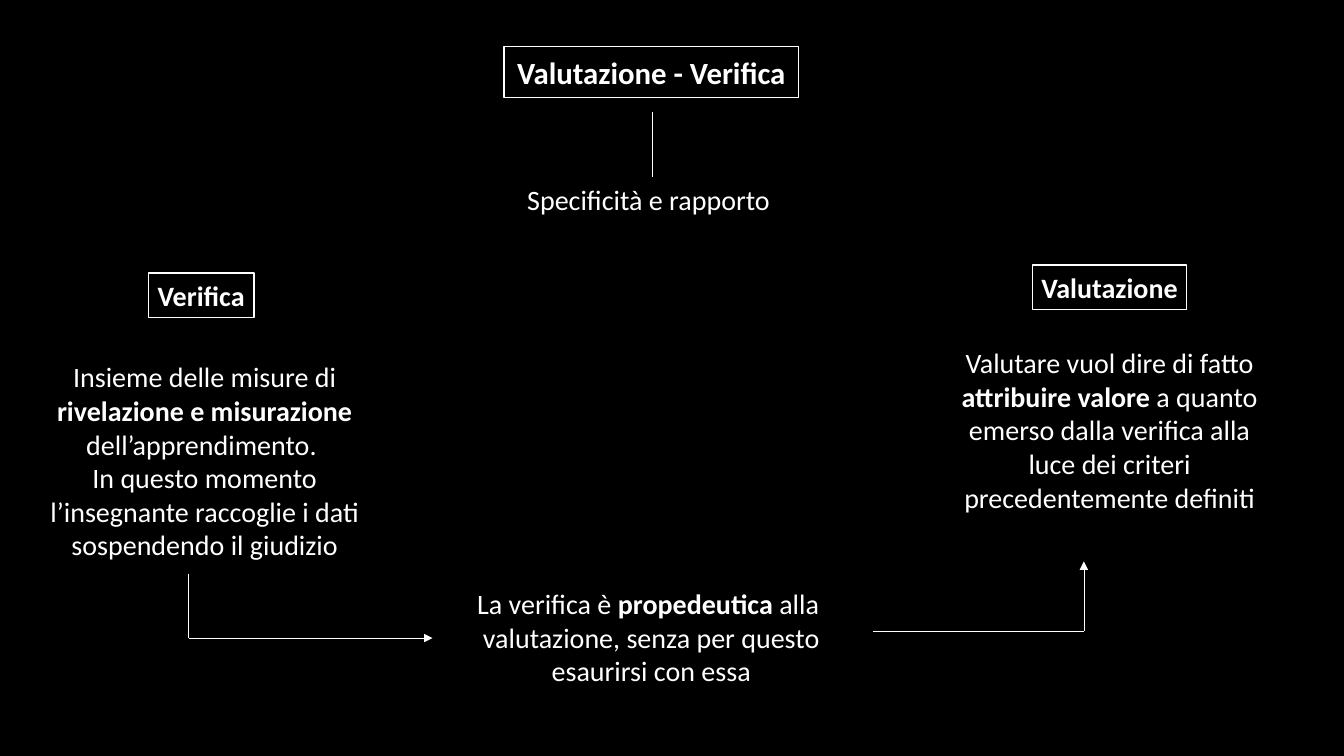
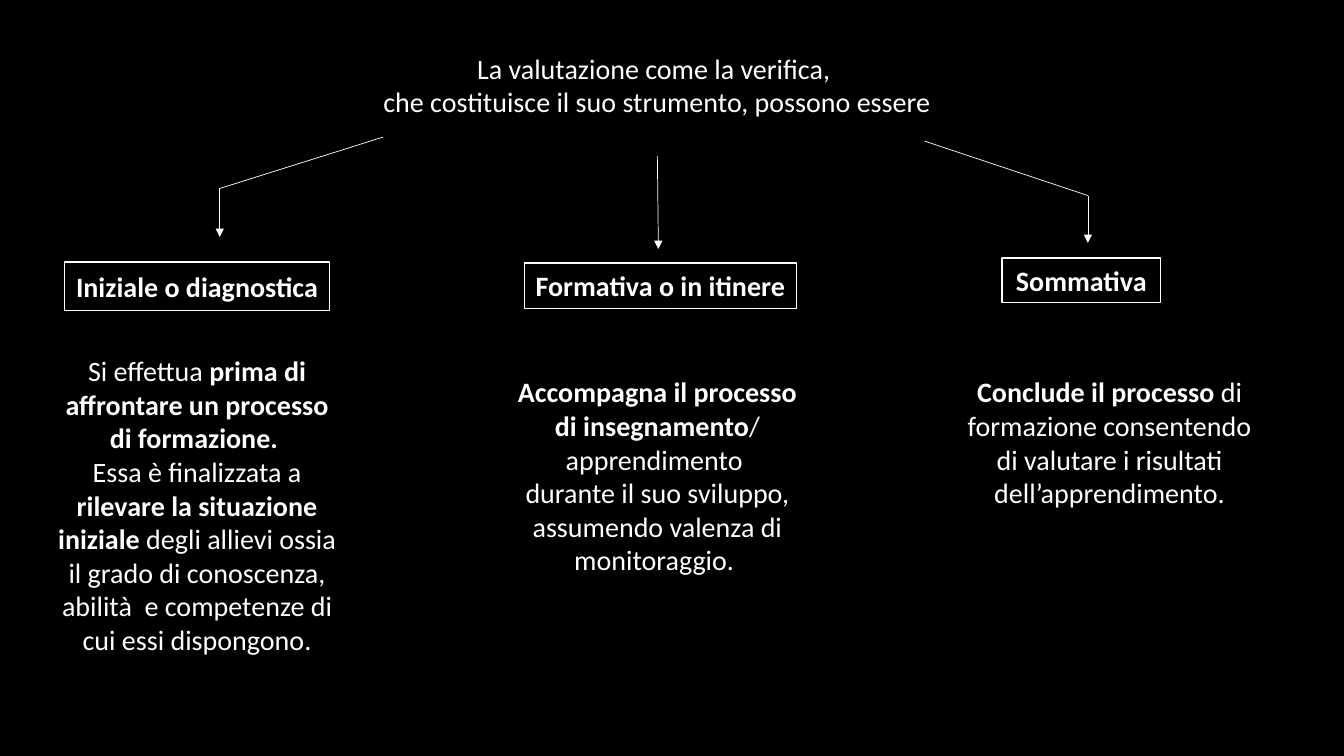
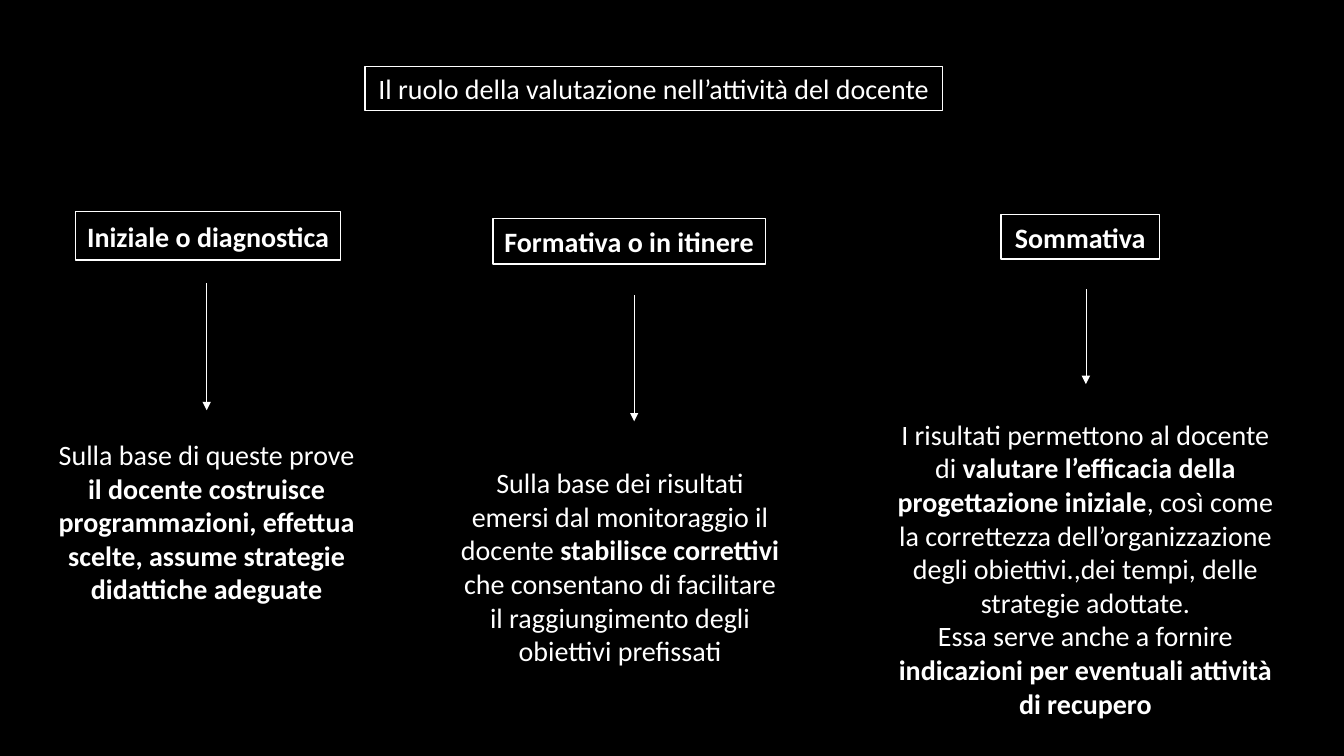
import itertools
from dataclasses import dataclass

import pptx
import pptx.dml.color
import pptx.enum.shapes
import pptx.enum.text
import pptx.oxml
import pptx.oxml.ns
import pptx.util
from pptx.util import Inches


@dataclass(frozen=True)
class Theme:
    """Hold the colours, font and sizes shared by all slides."""

    ground: pptx.dml.color.RGBColor = pptx.dml.color.RGBColor(0, 0, 0)
    ink: pptx.dml.color.RGBColor = pptx.dml.color.RGBColor(255, 255, 255)
    font: str = "Calibri"
    title_size: int = 22
    body_size: int = 20
    frame_width: float = 1
    line_width: float = 0.5


class ConceptMap:
    """Draw framed labels, paragraphs and arrows on the current slide."""

    def __init__(self, theme):
        self.theme = theme
        self.deck = pptx.Presentation()
        self.deck.slide_width = Inches(13.33)
        self.deck.slide_height = Inches(7.5)
        fill = self.deck.slide_master.background.fill
        fill.solid()
        fill.fore_color.rgb = theme.ground
        self.page = None

    def new_page(self):
        """Start a blank slide."""
        self.page = self.deck.slides.add_slide(self.deck.slide_layouts[6])

    def fill_frame(self, frame, texts, size, align):
        """Fill a text frame, setting the parts between asterisks in bold."""
        for index, text in enumerate(texts):
            para = frame.add_paragraph() if index else frame.paragraphs[0]
            para.alignment = align
            para.font.name = self.theme.font
            para.font.size = pptx.util.Pt(size)
            para.font.color.rgb = self.theme.ink
            for position, part in enumerate(text.split("*")):
                if part:
                    span = para.add_run()
                    span.text = part
                    span.font.bold = position % 2 == 1

    def text(self, left, top, width, height, *texts, align=pptx.enum.text.PP_ALIGN.CENTER):
        """Add a wrapped text box."""
        box = self.page.shapes.add_textbox(Inches(left), Inches(top), Inches(width), Inches(height))
        box.text_frame.word_wrap = True
        self.fill_frame(box.text_frame, texts, self.theme.body_size, align)

    def label(self, left, top, width, height, text, size=None):
        """Add a framed one-line label."""
        box = self.page.shapes.add_shape(
            pptx.enum.shapes.MSO_SHAPE.RECTANGLE, Inches(left), Inches(top), Inches(width), Inches(height)
        )
        box.shadow.inherit = False
        box.fill.background()
        box.line.color.rgb = self.theme.ink
        box.line.width = pptx.util.Pt(self.theme.frame_width)
        frame = box.text_frame
        frame.word_wrap = True
        frame.margin_left = frame.margin_right = 0
        frame.vertical_anchor = pptx.enum.text.MSO_ANCHOR.MIDDLE
        self.fill_frame(frame, [text], size or self.theme.body_size, pptx.enum.text.PP_ALIGN.CENTER)

    def route(self, *points, arrow=True):
        """Join points with straight lines, with an arrowhead at the last."""
        for start, end in itertools.pairwise(points):
            line = self.page.shapes.add_connector(
                pptx.enum.shapes.MSO_CONNECTOR.STRAIGHT, *(Inches(value) for value in start + end)
            )
            line.line.color.rgb = self.theme.ink
            line.line.width = pptx.util.Pt(self.theme.line_width)
            properties = line.element.spPr
            if arrow and end == points[-1]:
                head = pptx.oxml.parse_xml(f'<a:tailEnd {pptx.oxml.ns.nsdecls("a")} type="triangle"/>')
                properties.find(pptx.oxml.ns.qn("a:ln")).append(head)
            properties.append(pptx.oxml.parse_xml(f'<a:effectLst {pptx.oxml.ns.nsdecls("a")}/>'))

    def stages(self, *places):
        """Add the labels of the three kinds of assessment."""
        kinds = (
            ("*Iniziale o diagnostica*", 2.63, 0.48),
            ("*Formativa o in itinere*", 2.7, 0.45),
            ("*Sommativa*", 1.57, 0.44),
        )
        for (left, top), (name, width, height) in zip(places, kinds):
            self.label(left, top, width, height, name)


def draw_comparison(chart):
    """Draw the slide that compares testing and assessment."""
    chart.new_page()
    chart.label(5, 0.46, 2.92, 0.51, "*Valutazione - Verifica*", chart.theme.title_size)
    chart.route((6.47, 1.11), (6.47, 1.76), arrow=False)
    chart.text(5.13, 1.76, 2.69, 0.44, "Specificità e rapporto", align=pptx.enum.text.PP_ALIGN.LEFT)
    chart.label(1.47, 2.71, 1.05, 0.44, "*Verifica*")
    chart.label(10.24, 2.63, 1.53, 0.44, "*Valutazione*")
    chart.text(
        0.22, 3.52, 3.62, 2.12,
        "Insieme delle misure di *rivelazione e misurazione *dell’apprendimento. ",
        "In questo momento l’insegnante raccoglie i dati sospendendo il giudizio",
    )
    chart.text(
        9.36, 3.38, 3.29, 1.78,
        "Valutare vuol dire di fatto *attribuire valore *a quanto emerso dalla verifica "
        "alla luce dei criteri precedentemente definiti",
    )
    chart.text(
        4.56, 5.77, 3.8, 1.11,
        "La verifica è *propedeutica* alla  valutazione, senza per questo esaurirsi con essa",
    )
    chart.route((1.87, 5.69), (1.87, 6.33), (4.29, 6.33))
    chart.route((8.66, 6.26), (10.75, 6.26), (10.75, 5.57))


def draw_kinds(chart):
    """Draw the slide that defines the three kinds of assessment."""
    chart.new_page()
    chart.text(
        2.39, 0.46, 8.25, 0.77,
        "La valutazione come la verifica, ",
        "che costituisce il suo strumento, possono essere",
    )
    chart.route((3.8, 1.36), (2.18, 1.87), (2.18, 2.35))
    chart.route((6.52, 1.55), (6.53, 2.47))
    chart.route((9.17, 1.4), (10.79, 1.94), (10.79, 2.41))
    chart.stages((0.64, 2.6), (5.2, 2.61), (9.94, 2.56))
    chart.text(
        0.47, 3.46, 2.97, 3.47,
        "Si effettua *prima di affrontare un processo di formazione. *",
        "Essa è finalizzata a *rilevare la situazione iniziale* degli allievi ossia "
        "il grado di conoscenza, abilità  e competenze di cui essi dispongono.",
    )
    chart.text(
        5.01, 3.67, 3.02, 2.12,
        "*Accompagna il processo di insegnamento*/ apprendimento ",
        "durante il suo sviluppo, assumendo valenza di monitoraggio. ",
    )
    chart.text(
        9.38, 3.67, 3.25, 1.45,
        "*Conclude il processo *di formazione consentendo di valutare i risultati dell’apprendimento.",
    )


def draw_role(chart):
    """Draw the slide on how assessment serves the teacher."""
    chart.new_page()
    chart.label(3.62, 0.66, 5.73, 0.44, "Il ruolo della valutazione nell’attività del docente")
    chart.stages((0.75, 2.1), (4.89, 2.17), (9.93, 2.13))
    for x, top, bottom in ((2.05, 2.81, 4.07), (6.29, 2.93, 4.18), (10.77, 2.87, 3.81)):
        chart.route((x, top), (x, bottom))
    chart.text(
        0.48, 4.29, 3.14, 2.12,
        "Sulla base di queste prove *il docente costruisce programmazioni, effettua scelte, "
        "assume strategie didattiche adeguate*",
    )
    chart.text(
        4.47, 4.57, 3.36, 2.12,
        "Sulla base dei risultati emersi dal monitoraggio il docente *stabilisce correttivi *"
        "che consentano di facilitare il raggiungimento degli obiettivi prefissati",
    )
    chart.text(
        8.79, 4.09, 3.95, 3.13,
        "I risultati permettono al docente di *valutare l’efficacia della progettazione iniziale*, "
        "così come la correttezza dell’organizzazione degli obiettivi.,dei tempi, delle strategie adottate.",
        "Essa serve anche a fornire *indicazioni per eventuali attività di recupero*",
    )


def main():
    """Build and save the deck."""
    chart = ConceptMap(Theme())
    draw_comparison(chart)
    draw_kinds(chart)
    draw_role(chart)
    chart.deck.save("out.pptx")


if __name__ == "__main__":
    main()
